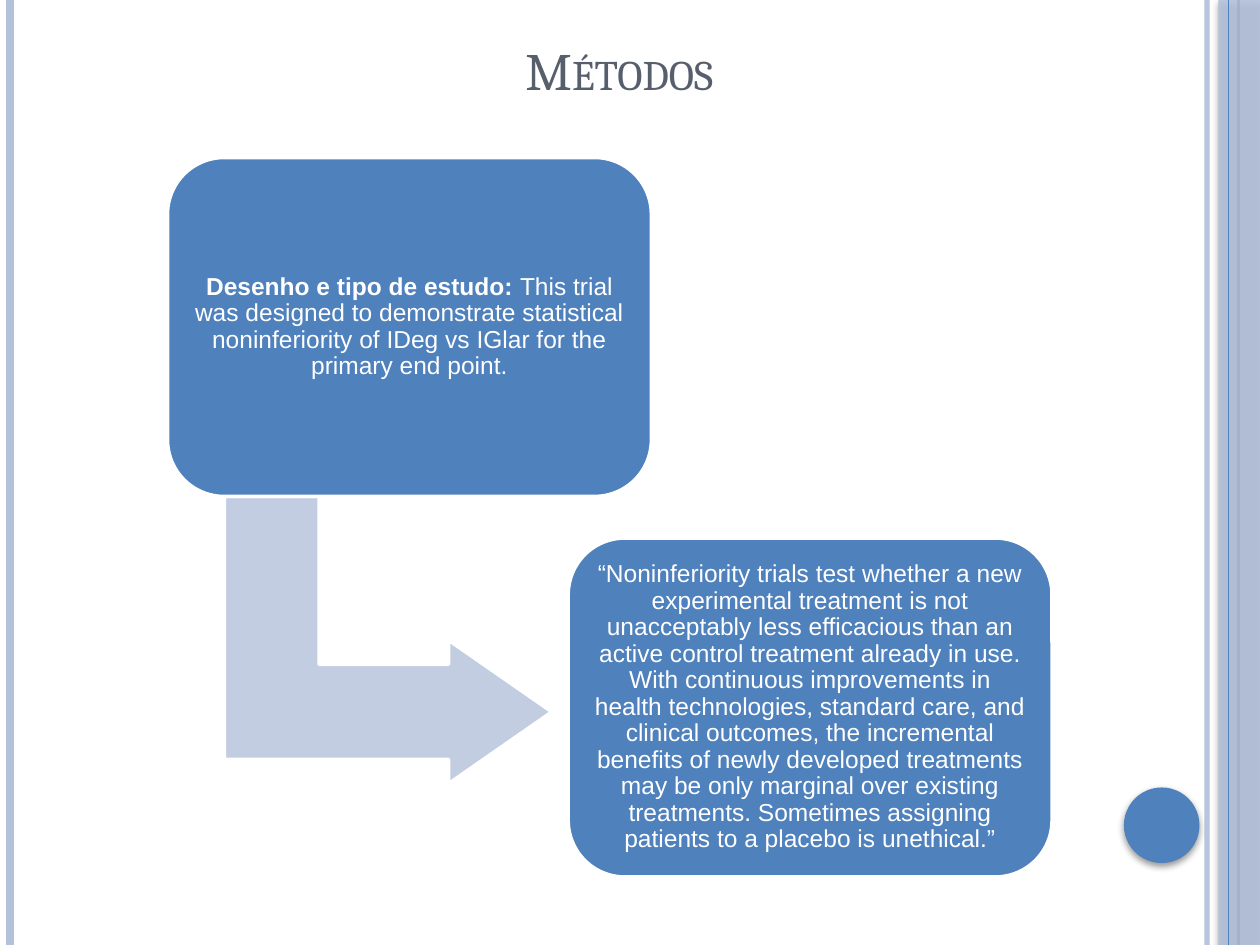
from pptx import Presentation
from pptx.dml.color import RGBColor
from pptx.enum.shapes import MSO_CONNECTOR as Connector, MSO_SHAPE as Shape
from pptx.enum.text import MSO_ANCHOR as Anchor, MSO_AUTO_SIZE as AutoSize, PP_ALIGN as Align
from pptx.oxml import parse_xml
from pptx.oxml.ns import nsdecls, qn
from pptx.util import Inches, Pt

WIDTH, HEIGHT = 10, 7.5
BLUE, PALE, ARROW, WHITE, SLATE = "4F81BD", "B3C1DB", "C2CDE1", "FFFFFF", "575F6D"

TITLE = "Métodos"
STEPS = [
    [("Desenho e tipo de estudo: ", True),
     ("This trial was designed to demonstrate statistical noninferiority of IDeg vs "
      "IGlar for the primary end point.", False)],
    [("“Noninferiority trials test whether a new experimental treatment is not "
      "unacceptably less efficacious than an active control treatment already in use. "
      "With continuous improvements in health technologies, standard care, and clinical "
      "outcomes, the incremental benefits of newly developed treatments may be only "
      "marginal over existing treatments. Sometimes assigning patients to a placebo is "
      "unethical.”", False)],
]
LEFT_RULES = [(9.58, PALE, 3, 93), (0.08, PALE, 4.5, 100), (9.83, BLUE, 1.5, 100)]
INNER_RULE = (9.75, BLUE, 0.75, 100)
STEP_ORIGIN, STEP_SHIFT, STEP_SIZE = (1.33, 1.25), (3.18, 3.02), (3.84, 2.69)


def color(code):
    return RGBColor.from_string(code)


def apply(target, values):
    for name, value in values.items():
        setattr(target, name, value)


def set_alpha(part, percent):
    if percent < 100:
        tint = part._element.spPr.find(".//" + qn("a:srgbClr"))
        tint.append(parse_xml(f'<a:alpha {nsdecls("a")} val="{percent * 1000}"/>'))


def add_rule(slide, x, code, weight, alpha):
    rule = slide.shapes.add_connector(
        Connector.STRAIGHT, Inches(x), 0, Inches(x), Inches(HEIGHT))
    rule.line.color.rgb = color(code)
    rule.line.width = Pt(weight)
    rule._element.spPr.append(parse_xml(f'<a:effectLst {nsdecls("a")}/>'))
    set_alpha(rule, alpha)


def add_block(slide, kind, box, code, border=None, adjust=()):
    block = slide.shapes.add_shape(kind, *map(Inches, box))
    block.shadow.inherit = False
    block.fill.solid()
    block.fill.fore_color.rgb = color(code)
    if border:
        block.line.color.rgb = color(border)
        block.line.width = Pt(2)
    else:
        block.line.fill.background()
    for index, value in enumerate(adjust):
        block.adjustments[index] = value
    return block


def add_shadow(block):
    block._element.spPr.find(qn("a:effectLst")).append(parse_xml(
        f'<a:outerShdw {nsdecls("a")} blurRad="{Pt(4)}" dist="{Pt(2)}" dir="5400000">'
        '<a:srgbClr val="000000"><a:alpha val="40000"/></a:srgbClr></a:outerShdw>'))


def add_text(paragraph, text, code, font_values):
    run = paragraph.add_run()
    run.text = text
    apply(run.font, font_values)
    run.font.color.rgb = color(code)
    return run


def add_frame(slide):
    for rule in LEFT_RULES:
        add_rule(slide, *rule)
    band = add_block(slide, Shape.RECTANGLE, (9.67, 0, WIDTH - 9.67, HEIGHT), PALE)
    set_alpha(band, 87)
    add_shadow(band)
    add_rule(slide, *INNER_RULE)
    add_shadow(add_block(slide, Shape.OVAL, (8.92, 6.25, 0.6, 0.6), BLUE))


def add_title(slide):
    title = slide.shapes.title
    apply(title, dict(left=Inches(0.83), top=Inches(0.21),
                      width=Inches(8.17), height=Inches(0.64)))
    apply(title.text_frame, dict(vertical_anchor=Anchor.BOTTOM, word_wrap=True,
                                 auto_size=AutoSize.NONE))
    heading = title.text_frame.paragraphs[0]
    heading.alignment = Align.CENTER
    run = add_text(heading, TITLE, SLATE, dict(name="Cambria", size=Pt(30)))
    run.font._element.set("cap", "small")


def add_step(slide, index, parts):
    corner = [start + index * shift for start, shift in zip(STEP_ORIGIN, STEP_SHIFT)]
    step = add_block(slide, Shape.ROUNDED_RECTANGLE, (*corner, *STEP_SIZE),
                     BLUE, WHITE, [0.167])
    margins = {f"margin_{side}": Inches(0.06) for side in ("left", "top", "right", "bottom")}
    apply(step.text_frame, dict(margins, word_wrap=True, vertical_anchor=Anchor.MIDDLE))
    paragraph = step.text_frame.paragraphs[0]
    apply(paragraph, dict(alignment=Align.CENTER, line_spacing=0.9, space_after=Pt(4.9)))
    for text, bold in parts:
        add_text(paragraph, text, WHITE, dict(name="Arial", size=Pt(14), bold=bold))


def main():
    deck = Presentation()
    apply(deck, dict(slide_width=Inches(WIDTH), slide_height=Inches(HEIGHT)))
    slide = deck.slides.add_slide(deck.slide_layouts[5])
    add_frame(slide)
    add_title(slide)
    arrow = add_block(slide, Shape.BENT_UP_ARROW, (1.94, 3.78, 2.28, 2.6),
                      ARROW, WHITE, [0.33, 0.25, 0.36])
    arrow.rotation = 90
    for index, parts in enumerate(STEPS):
        add_step(slide, index, parts)
    deck.save("out.pptx")


if __name__ == "__main__":
    main()
